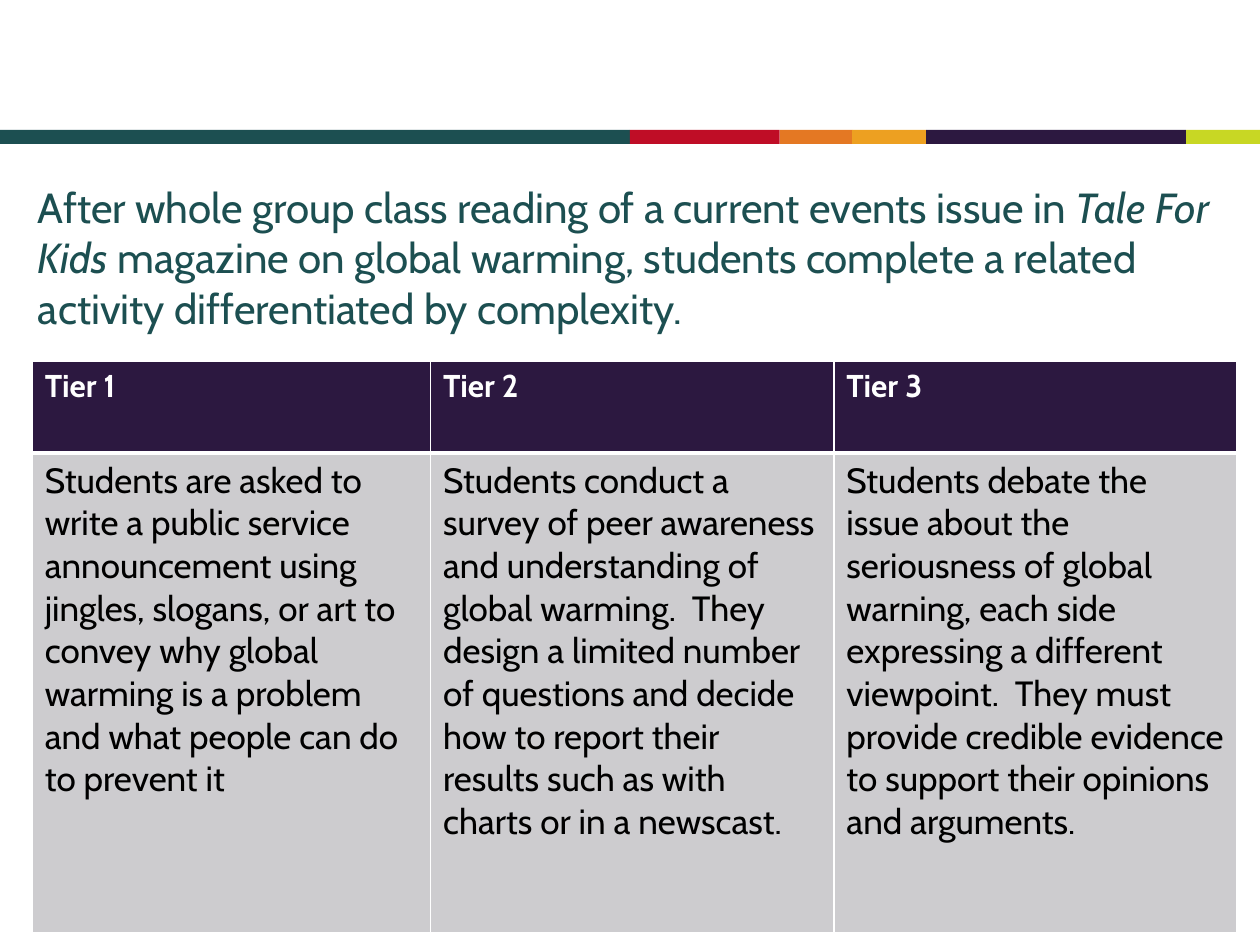
import itertools

import lxml.etree
import pptx
import pptx.dml.color
import pptx.enum.shapes
import pptx.enum.text
import pptx.oxml.ns
import pptx.util
from pptx.util import Cm

FONT = "Cabin"
TEAL, PURPLE, GREY, WHITE, BLACK = "1C4F51", "2C1840", "CDCCCF", "FFFFFF", "000000"
BAND_COLORS = [TEAL, "BF0D26", "E47823", "EDA021", PURPLE, "C8D724"]
BAND_EDGES = [0, 12.7, 15.72, 17.18, 18.67, 23.91, 25.4]
TITLE_RUNS = [
    ("After whole group class reading of a current events issue in ", False),
    ("Tale For Kids ", True),
    ("magazine on global warming, students complete a related activity "
     "differentiated by complexity.", False),
]
TIERS = [
    ("Tier 1", "Students are asked to write a public service announcement using "
     "jingles, slogans, or art to convey why global warming is a problem and what "
     "people can do to prevent it"),
    ("Tier 2", "Students conduct a survey of peer awareness and understanding of "
     "global warming.  They design a limited number of questions and decide how to "
     "report their results such as with charts or in a newscast."),
    ("Tier 3", "Students debate the issue about the seriousness of global warning, "
     "each side expressing a different viewpoint.  They must provide credible "
     "evidence to support their opinions and arguments."),
]


def set_color(color_format, value):
    color_format.rgb = pptx.dml.color.RGBColor.from_string(value)


def set_fill(fill, value):
    fill.solid()
    set_color(fill.fore_color, value)


def add_run(paragraph, text, size, color, bold=False, italic=False):
    run = paragraph.add_run()
    run.text = text
    run.font.name = FONT
    run.font.size = pptx.util.Pt(size)
    run.font.bold = bold
    run.font.italic = italic
    set_color(run.font.color, color)


def add_band(slide):
    for color, (left, right) in zip(BAND_COLORS, itertools.pairwise(BAND_EDGES)):
        shape = slide.shapes.add_shape(
            pptx.enum.shapes.MSO_SHAPE.RECTANGLE,
            Cm(left), Cm(2.62), Cm(right - left), Cm(0.28))
        shape.shadow.inherit = False
        set_fill(shape.fill, color)
        shape.line.fill.background()


def fill_title(slide):
    title = slide.shapes.title
    title.left, title.top, title.width, title.height = Cm(0.51), Cm(3.35), Cm(24.64), Cm(3.48)
    frame = title.text_frame
    frame.word_wrap = True
    frame.auto_size = pptx.enum.text.MSO_AUTO_SIZE.NONE
    frame.vertical_anchor = pptx.enum.text.MSO_ANCHOR.BOTTOM
    paragraph = frame.paragraphs[0]
    paragraph.alignment = pptx.enum.text.PP_ALIGN.LEFT
    for text, italic in TITLE_RUNS:
        add_run(paragraph, text, 24, TEAL, italic=italic)


def set_borders(cell, widths):
    properties = cell._tc.get_or_add_tcPr()
    for side, width in zip("LRTB", widths):
        line = lxml.etree.SubElement(
            properties, pptx.oxml.ns.qn(f"a:ln{side}"), w=str(pptx.util.Pt(width)))
        solid = lxml.etree.SubElement(line, pptx.oxml.ns.qn("a:solidFill"))
        lxml.etree.SubElement(solid, pptx.oxml.ns.qn("a:srgbClr"), val=WHITE)


def fill_cell(cell, text, size, color, background, borders, bold=False):
    set_borders(cell, borders)
    set_fill(cell.fill, background)
    add_run(cell.text_frame.paragraphs[0], text, size, color, bold)


def add_tier_table(slide):
    table = slide.shapes.add_table(
        2, len(TIERS), Cm(0.65), Cm(7.28), Cm(24.29), Cm(11.53)).table
    for column, width in zip(table.columns, [8.03, 8.13, 8.13]):
        column.width = Cm(width)
    for row, height in zip(table.rows, [1.85, 9.68]):
        row.height = Cm(height)
    for index, (heading, activity) in enumerate(TIERS):
        fill_cell(table.cell(0, index), heading, 18, WHITE, PURPLE, [1, 1, 1, 3], bold=True)
        fill_cell(table.cell(1, index), activity, 20, BLACK, GREY, [1, 1, 3, 1])


def main():
    presentation = pptx.Presentation()
    presentation.slide_width, presentation.slide_height = Cm(25.4), Cm(19.05)
    slide = presentation.slides.add_slide(presentation.slide_layouts[5])
    add_band(slide)
    fill_title(slide)
    add_tier_table(slide)
    presentation.save("out.pptx")


if __name__ == "__main__":
    main()
